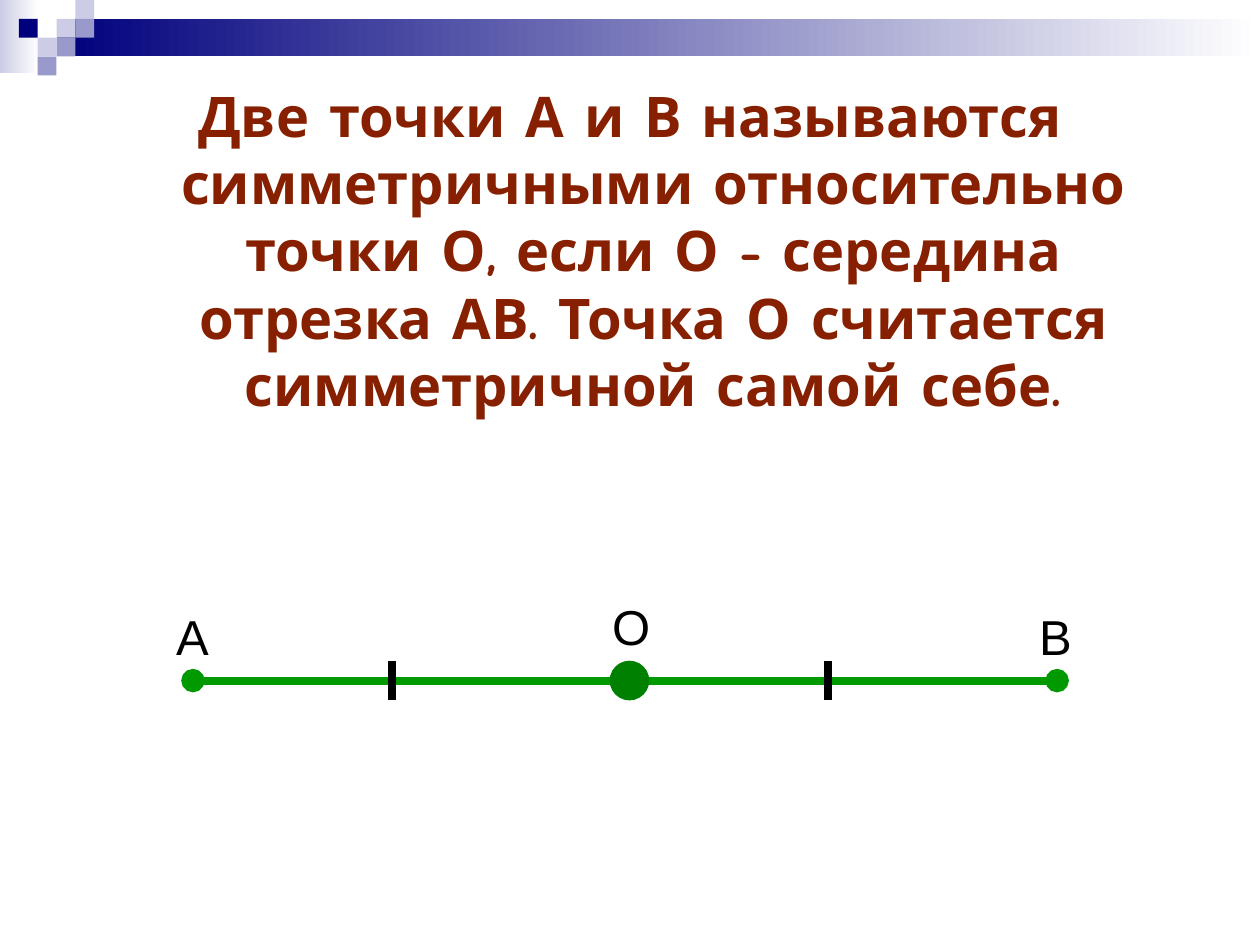
from lxml import etree
from pptx import Presentation
from pptx import util as u
from pptx.dml.color import RGBColor
from pptx.enum import shapes, text
from pptx.oxml.ns import qn

NAVY = RGBColor(0x00, 0x00, 0x7D)
LAVENDER = RGBColor(0xCC, 0xCC, 0xE6)
VIOLET = RGBColor(0x99, 0x99, 0xCC)
WHITE = RGBColor(0xFF, 0xFF, 0xFF)
BLACK = RGBColor(0x00, 0x00, 0x00)
BROWN = RGBColor(0x86, 0x20, 0x00)
GREEN = RGBColor(0x00, 0x99, 0x00)
DARK_GREEN = RGBColor(0x00, 0x80, 0x00)

DEFINITION = (
    "Две точки А и В называются симметричными относительно точки О, "
    "если О - середина отрезка АВ. Точка О считается симметричной самой себе."
)


def add_filled(page, kind, box, color, fade_to=None):
    """Add a borderless shape, solid or fading from left to right."""
    shape = page.shapes.add_shape(kind, *map(u.Cm, box))
    shape.shadow.inherit = False
    shape.line.fill.background()
    if fade_to is None:
        shape.fill.solid()
        shape.fill.fore_color.rgb = color
    else:
        shape.fill.gradient()
        shape.fill.gradient_angle = 0
        for stop, shade in zip(shape.fill.gradient_stops, (color, fade_to)):
            stop.color.rgb = shade


def add_stroke(page, start, end, color, oval_end=None):
    """Add a thick straight line, with an oval at headEnd or tailEnd."""
    line = page.shapes.add_connector(
        shapes.MSO_CONNECTOR.STRAIGHT, *map(u.Cm, (*start, *end))
    )
    line.line.color.rgb = color
    line.line.width = u.Pt(4.5)
    if oval_end:
        etree.SubElement(line.line._get_or_add_ln(), qn(f"a:{oval_end}"), type="oval")
    etree.SubElement(line._element.spPr, qn("a:effectLst"))


def add_words(page, box, words, font, size, color, bold=False, wrap=False):
    """Add a one-paragraph text box and return its paragraph."""
    frame = page.shapes.add_textbox(*map(u.Cm, box)).text_frame
    frame.text = words
    frame.word_wrap = wrap
    para = frame.paragraphs[0]
    span = para.runs[0]
    span.font.name = font
    span.font.size = u.Pt(size)
    span.font.bold = bold
    span.font.color.rgb = color
    return para


def add_banner(page, box):
    """Draw the fading bar and the mosaic of small squares."""
    left, top, width, height = box
    side = 0.38
    rectangle = shapes.MSO_SHAPE.RECTANGLE
    add_filled(page, rectangle, (left, top, 0.79, height), LAVENDER, WHITE)
    bar = (left + 3 * side, top + side, width - 3 * side, 2 * side)
    add_filled(page, rectangle, bar, NAVY, WHITE)
    mosaic = [
        (3, 1, LAVENDER), (4, 0, LAVENDER), (4, 1, VIOLET), (2, 2, LAVENDER),
        (1, 1, NAVY), (3, 2, VIOLET), (2, 3, VIOLET),
    ]
    for column, row, color in mosaic:
        square = (left + column * side, top + row * side, side, side)
        add_filled(page, rectangle, square, color)


def add_segment(page, box):
    """Draw segment AB with its middle O, equal-half ticks and labels."""
    left, top, width, height = box
    axis = top + 1.81
    middle = left + 9.39
    radius = 0.4
    ends = [(left + 0.59, "headEnd"), (left + width - 0.56, "tailEnd")]
    (start, head), (finish, tail) = ends
    add_stroke(page, (start, axis), (middle, axis), GREEN, head)
    add_stroke(page, (middle, axis), (finish, axis), GREEN, tail)
    labels = [("А", 0, 0.2, 1.17), ("В", 17.4, 0.2, 1.17), ("О", 8.79, 0, 1.27)]
    for letter, across, down, size in labels:
        add_words(page, (left + across, top + down, size, 1.45), letter, "Arial", 28, BLACK)
    for across in (4.6, 13.39):
        x = left + across
        add_stroke(page, (x, axis - radius), (x, axis + radius), BLACK)
    dot = (middle - radius, axis - radius, 2 * radius, 2 * radius)
    add_filled(page, shapes.MSO_SHAPE.OVAL, dot, DARK_GREEN)


def add_definition(page, box):
    """Write the centred definition with a hanging indent."""
    para = add_words(page, box, DEFINITION, "Comic Neue", 32, BROWN, bold=True, wrap=True)
    para.alignment = text.PP_ALIGN.CENTER
    properties = para._p.get_or_add_pPr()
    properties.set("marL", str(u.Cm(0.95)))
    properties.set("indent", str(-u.Cm(0.95)))


def main():
    """Build the symmetry slide and save it."""
    deck = Presentation()
    deck.slide_width, deck.slide_height = u.Cm(25.4), u.Cm(19.05)
    page = deck.slides.add_slide(deck.slide_layouts[6])
    add_banner(page, (0, 0, 25.4, 1.47))
    add_segment(page, (3.3, 11.91, 18.57, 2.21))
    add_definition(page, (1.27, 1.52, 22.86, 14.78))
    deck.save("out.pptx")


if __name__ == "__main__":
    main()
